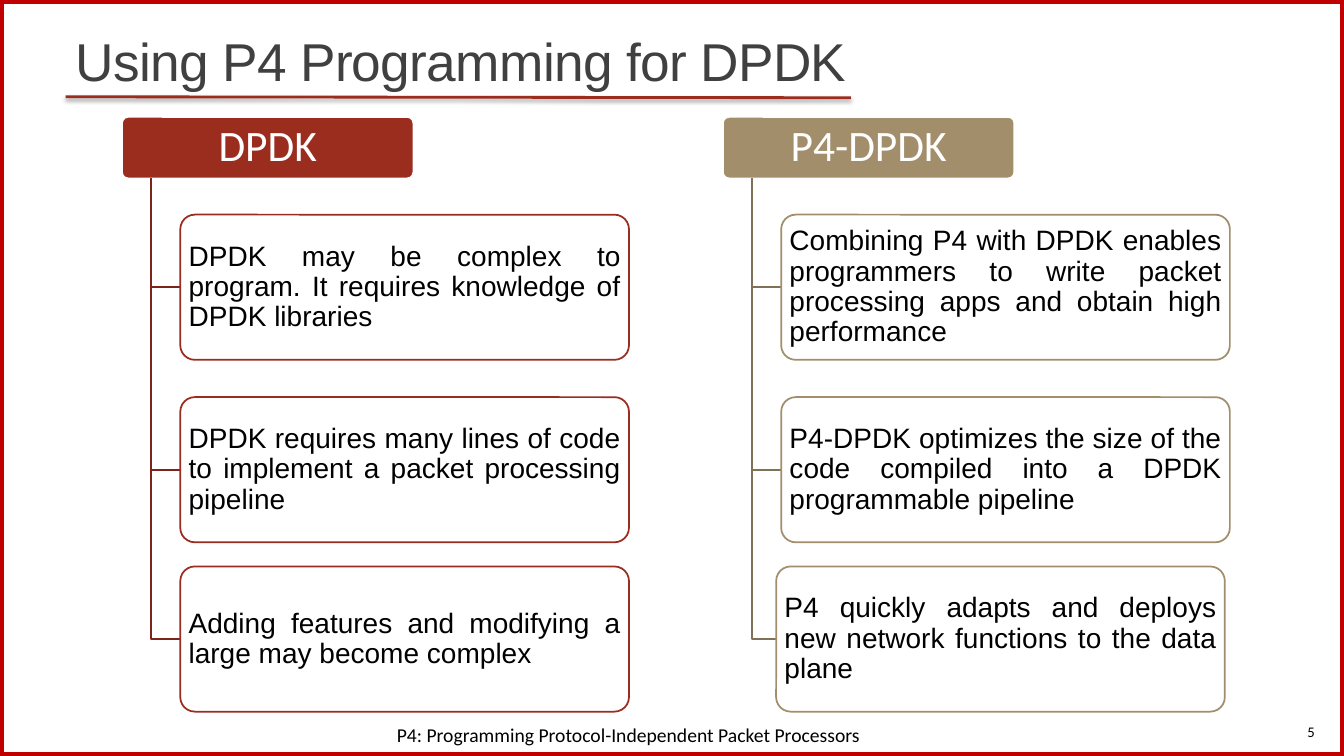
from lxml.etree import SubElement
from pptx import Presentation
from pptx.dml.color import RGBColor
from pptx.enum.shapes import MSO_CONNECTOR, MSO_SHAPE
from pptx.enum.text import MSO_ANCHOR, PP_ALIGN
from pptx.oxml.ns import qn
from pptx.util import Inches, Pt

# Grid, in inches
WIDTH, HEIGHT = 13.33, 7.5
COLUMNS = (1.21, 7.17)
HEADER_TOP, HEADER_WIDTH, HEADER_HEIGHT = 1.16, 2.89, 0.61
ROWS = (2.13, 3.94, 5.62)
POINT_WIDTH, POINT_HEIGHT = 4.45, 1.44
INDENT = HEADER_WIDTH / 10

# Heading, fill, branch colour, points, shift of each point to the right
TOPICS = (
    ("DPDK", "9B2D1F", "7C2419", (
        "DPDK may be complex to program. It requires knowledge of DPDK libraries",
        "DPDK requires many lines of code to implement a packet processing pipeline",
        "Adding features and modifying a large may become complex",
    ), (0, 0, 0)),
    ("P4-DPDK", "A28E6A", "827255", (
        "Combining P4 with DPDK enables programmers to write packet processing apps "
        "and obtain high performance",
        "P4-DPDK optimizes the size of the code compiled into a DPDK programmable pipeline",
        "P4 quickly adapts and deploys new network functions to the data plane",
    ), (0, 0, -0.05)),
)


def color(value):
    return RGBColor.from_string(value)


def inches(*lengths):
    return [Inches(length) for length in lengths]


def set_line(shape, value, width):
    shape.line.color.rgb = color(value)
    shape.line.width = Pt(width)


def write(shape, text, size, font, value, align=PP_ALIGN.LEFT,
          anchor=MSO_ANCHOR.MIDDLE, spacing=1.0):
    frame = shape.text_frame
    frame.word_wrap = True
    frame.vertical_anchor = anchor
    para = frame.paragraphs[0]
    para.alignment = align
    para.line_spacing = spacing
    span = para.add_run()
    span.text = text
    span.font.size = Pt(size)
    span.font.name = font
    span.font.color.rgb = color(value)
    return span


def add_box(page, kind, place, fill, line, width):
    box = page.shapes.add_shape(kind, *inches(*place))
    box.shadow.inherit = False
    if fill:
        box.fill.solid()
        box.fill.fore_color.rgb = color(fill)
    else:
        box.fill.background()
    set_line(box, line, width)
    return box


def add_card(page, place, fill, line, margins):
    card = add_box(page, MSO_SHAPE.ROUNDED_RECTANGLE, place, fill, line, 1.25)
    card.adjustments[0] = 0.1
    frame = card.text_frame
    frame.margin_left = frame.margin_right = Inches(margins[0])
    frame.margin_top = frame.margin_bottom = Inches(margins[1])
    return card


def add_branch(page, left, top, right, bottom, value):
    left, top, right, bottom = inches(left, top, right, bottom)
    builder = page.shapes.build_freeform(left, top)
    builder.add_line_segments([(left, bottom), (right, bottom)], close=False)
    branch = builder.convert_to_shape()
    branch.shadow.inherit = False
    branch.fill.background()
    set_line(branch, value, 1.25)


def add_topic(page, left, heading, fill, branch_color, points, shifts):
    header = add_card(page, (left, HEADER_TOP, HEADER_WIDTH, HEADER_HEIGHT),
                      fill, "FFFFFF", (0.06, 0.04))
    write(header, heading, 31, "Calibri", "FFFFFF", PP_ALIGN.CENTER, spacing=0.9)
    for top, text, shift in zip(ROWS, points, shifts):
        point_left = left + 2 * INDENT + shift
        add_branch(page, left + INDENT, HEADER_TOP + HEADER_HEIGHT,
                   point_left, top + POINT_HEIGHT / 2, branch_color)
        point = add_card(page, (point_left, top, POINT_WIDTH, POINT_HEIGHT),
                         "FFFFFF", fill, (0.04, 0.03))
        write(point, text, 20, "Arial", "000000", PP_ALIGN.JUSTIFY, spacing=0.9)


def add_title(page, text):
    title = page.shapes.title
    title.left, title.top, title.width, title.height = inches(0.65, 0, 12.01, 0.97)
    span = write(title, text, 38, "Arial", "404040",
                 anchor=MSO_ANCHOR.BOTTOM, spacing=0.85)
    span.font._element.set("spc", "-50")


def add_underline(page):
    rule = page.shapes.add_connector(MSO_CONNECTOR.STRAIGHT,
                                     *inches(0.65, 0.96, 8.44, 0.97))
    set_line(rule, "9B2D1F", 2)
    # Soft shadow below the rule
    effects = SubElement(rule._element.spPr, qn("a:effectLst"))
    shadow = SubElement(effects, qn("a:outerShdw"), blurRad=str(Pt(3.1)),
                        dist=str(Pt(1.6)), dir="5400000", rotWithShape="0")
    shade = SubElement(shadow, qn("a:srgbClr"), val="000000")
    SubElement(shade, qn("a:alpha"), val="38000")


def add_label(page, place, text, size, align, anchor):
    label = page.shapes.add_textbox(*inches(*place))
    write(label, text, size, "Calibri", "000000", align, anchor)


def main():
    deck = Presentation()
    deck.slide_width, deck.slide_height = inches(WIDTH, HEIGHT)
    page = deck.slides.add_slide(deck.slide_layouts[5])

    # Frame and title
    add_box(page, MSO_SHAPE.RECTANGLE, (0, 0, WIDTH, HEIGHT), None, "C00000", 6)
    add_title(page, "Using P4 Programming for DPDK")
    add_underline(page)

    # Two topics with their points
    for left, topic in zip(COLUMNS, TOPICS):
        add_topic(page, left, *topic)

    # Page number and footer
    add_label(page, (11.71, 7.06, 1.43, 0.4), "5", 10.5,
              PP_ALIGN.RIGHT, MSO_ANCHOR.MIDDLE)
    add_label(page, (1, 7.12, 10.47, 0.34),
              "P4: Programming Protocol-Independent Packet Processors", 14,
              PP_ALIGN.CENTER, MSO_ANCHOR.TOP)
    deck.save("out.pptx")


if __name__ == "__main__":
    main()
